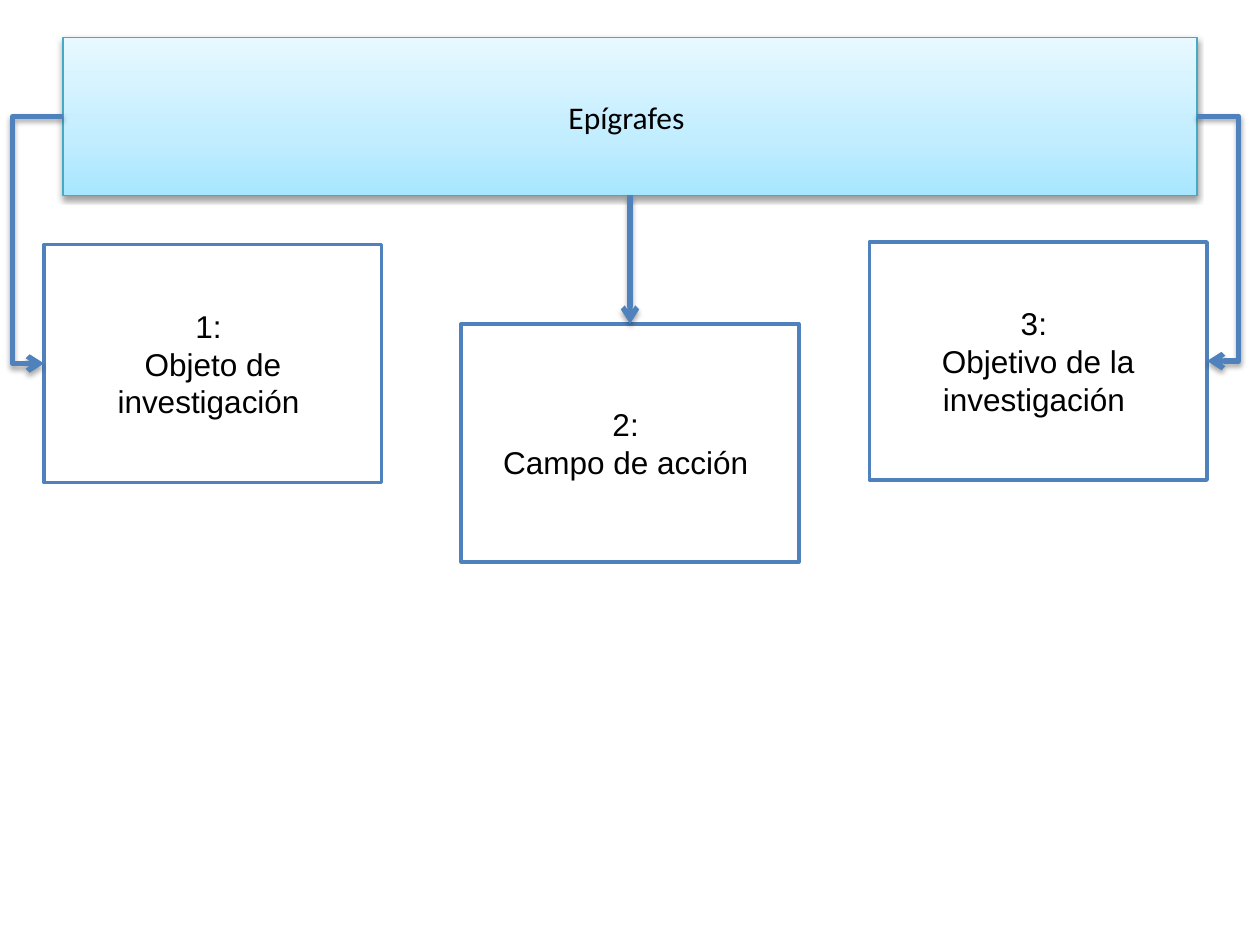
from copy import deepcopy

from lxml.etree import SubElement
from pptx import Presentation
from pptx.dml.color import RGBColor
from pptx.enum.shapes import MSO_CONNECTOR, MSO_SHAPE
from pptx.enum.text import MSO_ANCHOR, PP_ALIGN
from pptx.oxml.ns import qn
from pptx.util import Inches, Pt

TITLE = "Epígrafes "
TITLE_AREA = (0.5, 0.3, 9, 1.25)
BOX_SIZE = (2.68, 1.89)
BOXES = [
    {"lines": ["1: ", "Objeto de investigación "], "at": (0.35, 1.94)},
    {"lines": ["2: ", "Campo de acción "], "at": (3.66, 2.57)},
    {"lines": ["3: ", "Objetivo de la investigación "], "at": (6.9, 1.92)},
]
LEFT_LANE, RIGHT_LANE = 0.1, 9.83

THEME = {
    "title_font": "Calibri",
    "body_font": "Arial",
    "size": 18,
    "text": "000000",
    "box_fill": "FFFFFF",
    "accent": "4F81BD",
    "title_line": "46AAC5",
    "title_gradient": [(0, "A7E6FF"), (0.35, "C1EDFF"), (1, "E7F8FF")],
    "title_line_width": 0.75,
    "box_line_width": 2,
    "arrow_width": 3,
    "title_shadow": {"opacity": 38, "distance": 1.6},
    "arrow_shadow": {"opacity": 35, "distance": 1.8},
    "shadow_blur": 3.1,
}


def color(value):
    return RGBColor.from_string(value)


def set_line(shape, value, width):
    shape.line.color.rgb = color(value)
    shape.line.width = Pt(width)


def write_text(shape, lines, font):
    frame = shape.text_frame
    frame.text = "\n".join(lines)
    frame.word_wrap = True
    frame.vertical_anchor = MSO_ANCHOR.MIDDLE
    for paragraph in frame.paragraphs:
        paragraph.alignment = PP_ALIGN.CENTER
        paragraph.font.name = font
        paragraph.font.size = Pt(THEME["size"])
        paragraph.font.color.rgb = color(THEME["text"])


def add_shadow(shape, opacity, distance):
    effects = SubElement(shape.element.spPr, qn("a:effectLst"))
    shadow = SubElement(effects, qn("a:outerShdw"), {
        "blurRad": str(Pt(THEME["shadow_blur"])),
        "dist": str(Pt(distance)),
        "dir": "5400000",
        "rotWithShape": "0",
    })
    shade = SubElement(shadow, qn("a:srgbClr"), val="000000")
    SubElement(shade, qn("a:alpha"), val=str(opacity * 1000))


def fill_gradient(shape, stops):
    shape.fill.gradient()
    shape.fill.gradient_angle = 90
    stop_list = shape.element.spPr.find(".//" + qn("a:gsLst"))
    stop_list.insert(1, deepcopy(stop_list[0]))
    for stop, (position, value) in zip(shape.fill.gradient_stops, stops):
        stop.position = position
        stop.color.rgb = color(value)


def add_title(slide):
    title = slide.shapes.title
    title.left, title.top, title.width, title.height = map(Inches, TITLE_AREA)
    fill_gradient(title, THEME["title_gradient"])
    set_line(title, THEME["title_line"], THEME["title_line_width"])
    add_shadow(title, **THEME["title_shadow"])
    write_text(title, [TITLE], THEME["title_font"])
    return title


def add_box(slide, lines, at):
    box = slide.shapes.add_shape(MSO_SHAPE.RECTANGLE, *map(Inches, at + BOX_SIZE))
    box.shadow.inherit = False
    box.fill.solid()
    box.fill.fore_color.rgb = color(THEME["box_fill"])
    set_line(box, THEME["accent"], THEME["box_line_width"])
    write_text(box, lines, THEME["body_font"])
    return box


def add_arrow(slide, kind, start, end):
    arrow = slide.shapes.add_connector(kind, *start, *end)
    set_line(arrow, THEME["accent"], THEME["arrow_width"])
    line = arrow.element.spPr.find(qn("a:ln"))
    SubElement(line, qn("a:tailEnd"), type="arrow")
    add_shadow(arrow, **THEME["arrow_shadow"])
    return arrow


def add_side_arrow(slide, start, end, lane):
    arrow = add_arrow(slide, MSO_CONNECTOR.ELBOW, start, end)
    bend = round((Inches(lane) - start[0]) / (end[0] - start[0]) * 100000)
    geometry = arrow.element.spPr.find(qn("a:prstGeom"))
    SubElement(geometry.find(qn("a:avLst")), qn("a:gd"), name="adj1", fmla=f"val {bend}")


def side_middle(shape, right):
    return shape.left + shape.width * right, shape.top + shape.height // 2


def main():
    presentation = Presentation()
    presentation.slide_width, presentation.slide_height = Inches(10), Inches(7.5)
    slide = presentation.slides.add_slide(presentation.slide_layouts[5])

    title = add_title(slide)
    left_box, middle_box, right_box = [add_box(slide, **box) for box in BOXES]

    for box, right, lane in [(left_box, 0, LEFT_LANE), (right_box, 1, RIGHT_LANE)]:
        add_side_arrow(slide, side_middle(title, right), side_middle(box, right), lane)

    center = title.left + title.width // 2
    down = add_arrow(slide, MSO_CONNECTOR.STRAIGHT,
                     (center, title.top + title.height), (center, middle_box.top))
    down.begin_connect(title, 2)
    down.end_connect(middle_box, 0)

    presentation.save("out.pptx")


if __name__ == "__main__":
    main()
